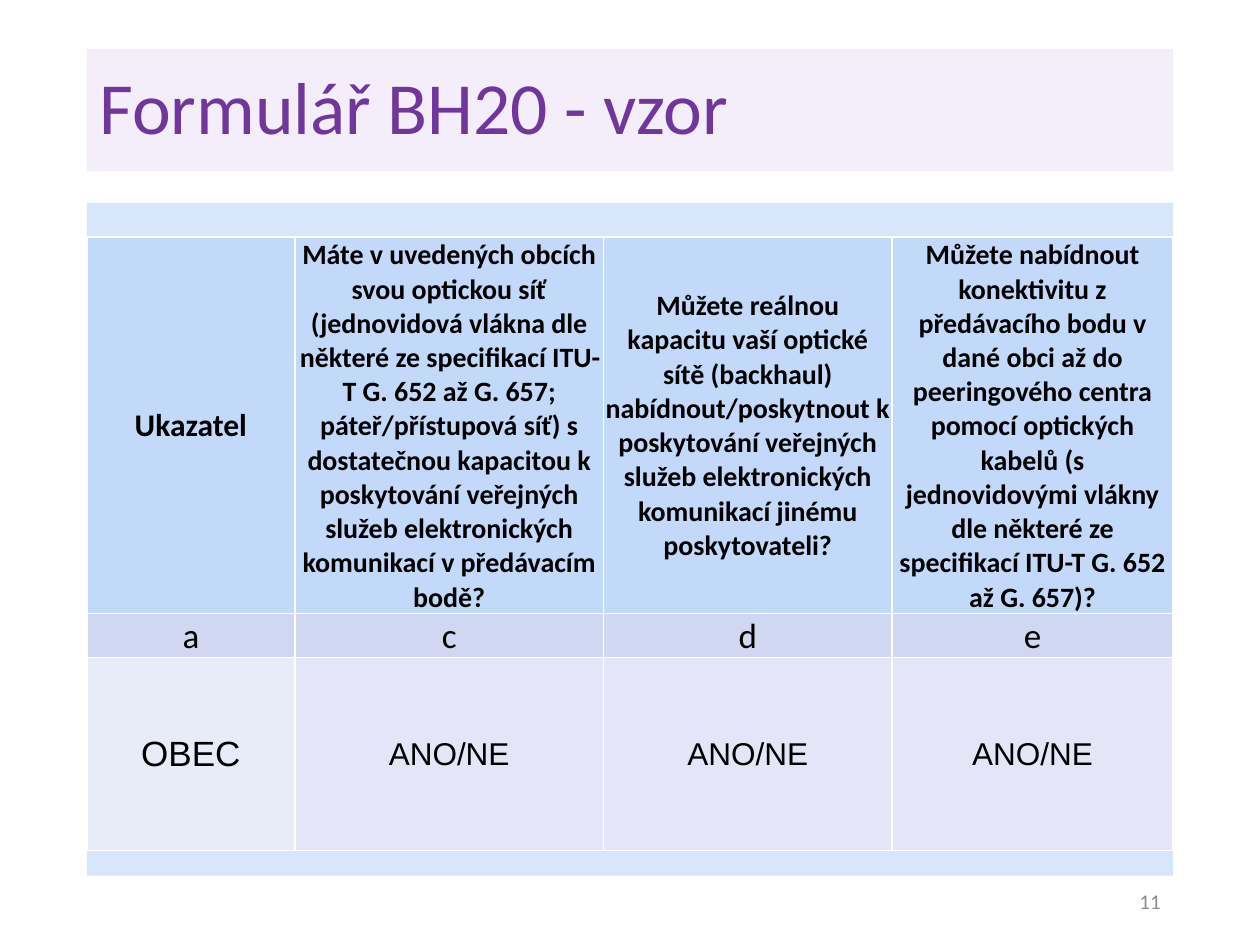
from dataclasses import dataclass

from lxml import etree
from pptx import Presentation
from pptx import util as u
from pptx.dml.color import RGBColor
from pptx.enum import shapes, text
from pptx.oxml.ns import qn


@dataclass(frozen=True)
class Theme:
    font: str = "Calibri"
    answer_font: str = "Arial"
    purple: str = "70369B"
    lilac: str = "EEE5F7"
    blue: str = "C2D9FA"
    letter_fill: str = "D0D8F1"
    town_fill: str = "E7ECF8"
    black: str = "000000"
    white: str = "FFFFFF"
    grey: str = "8C8C8C"
    title: int = 42
    large: int = 20
    label: int = 18
    question: int = 16
    number: int = 12
    opacity: int = 65


THEME = Theme()
COLUMNS = (1.65, 2.45, 2.29, 2.23)
ROWS = (2.99, 0.35, 1.53)
HEADINGS = (
    "Ukazatel",
    "Máte v uvedených obcích svou optickou síť (jednovidová vlákna dle "
    "některé ze specifikací ITU-T G. 652 až G. 657; páteř/přístupová síť) s "
    "dostatečnou kapacitou k poskytování veřejných služeb elektronických "
    "komunikací v předávacím bodě?",
    "Můžete reálnou kapacitu vaší optické sítě (backhaul) "
    "nabídnout/poskytnout k poskytování veřejných služeb elektronických "
    "komunikací jinému poskytovateli?",
    "Můžete nabídnout konektivitu z předávacího bodu v dané obci až do "
    "peeringového centra pomocí optických kabelů (s jednovidovými vlákny dle "
    "některé ze specifikací ITU-T G. 652 až G. 657)?",
)
LETTERS = ("a", "c", "d", "e")
ANSWERS = ("OBEC",) + ("ANO/NE",) * 3


def paint(fill, color, opacity=100):
    fill.solid()
    fill.fore_color.rgb = RGBColor.from_string(color)
    if opacity < 100:
        for tint in fill._xPr.iter(qn("a:srgbClr")):
            etree.SubElement(tint, qn("a:alpha"), val=str(opacity * 1000))


def write(frame, words, size, color=THEME.black, font=THEME.font, bold=False,
          align=text.PP_ALIGN.LEFT, spacing=1.0):
    para = frame.paragraphs[0]
    para.alignment = align
    para.line_spacing = spacing
    span = para.add_run()
    span.text = words
    span.font.name = font
    span.font.size = u.Pt(size)
    span.font.bold = bold
    span.font.color.rgb = RGBColor.from_string(color)


def add_panel(page, box, color):
    panel = page.shapes.add_shape(shapes.MSO_SHAPE.RECTANGLE, *map(u.Inches, box))
    panel.shadow.inherit = False
    panel.line.fill.background()
    paint(panel.fill, color, THEME.opacity)
    return panel


def add_title(page, box):
    frame = add_panel(page, box, THEME.lilac).text_frame
    frame.word_wrap = True
    frame.vertical_anchor = text.MSO_ANCHOR.MIDDLE
    write(frame, "Formulář BH20 - vzor", THEME.title, THEME.purple, spacing=0.9)


def add_borders(cell):
    properties = cell._tc.get_or_add_tcPr()
    for index, side in enumerate(("lnL", "lnR", "lnT", "lnB")):
        line = etree.Element(qn(f"a:{side}"), w=str(u.Pt(1)))
        solid = etree.SubElement(line, qn("a:solidFill"))
        etree.SubElement(solid, qn("a:srgbClr"), val=THEME.white)
        properties.insert(index, line)


def fill_cell(cell, words, color, opacity=100, **style):
    cell.margin_left = cell.margin_right = cell.margin_top = u.Inches(0.01)
    cell.margin_bottom = 0
    cell.vertical_anchor = text.MSO_ANCHOR.MIDDLE
    paint(cell.fill, color, opacity)
    add_borders(cell)
    write(cell.text_frame, words, align=text.PP_ALIGN.CENTER, **style)


def add_form(page, box):
    left, top, width, height = box
    add_panel(page, box, THEME.blue)
    table = page.shapes.add_table(
        len(ROWS), len(COLUMNS), u.Inches(left), u.Inches(top + 0.27),
        u.Inches(width), u.Inches(sum(ROWS))).table
    for column, size in zip(table.columns, COLUMNS):
        column.width = u.Inches(size)
    for row, size in zip(table.rows, ROWS):
        row.height = u.Inches(size)

    # The first column names the town, the others hold the questions
    for index, (heading, letter, answer) in enumerate(zip(HEADINGS, LETTERS, ANSWERS)):
        first = index == 0
        fill_cell(table.cell(0, index), heading, THEME.blue, bold=True,
                  size=THEME.label if first else THEME.question)
        fill_cell(table.cell(1, index), letter, THEME.letter_fill, size=THEME.large)
        fill_cell(table.cell(2, index), answer,
                  THEME.town_fill if first else THEME.lilac,
                  100 if first else THEME.opacity,
                  size=THEME.large if first else THEME.label,
                  font=THEME.answer_font)


def add_page_number(page, box):
    frame = page.shapes.add_textbox(*map(u.Inches, box)).text_frame
    frame.word_wrap = True
    frame.vertical_anchor = text.MSO_ANCHOR.MIDDLE
    write(frame, "11", THEME.number, THEME.grey, align=text.PP_ALIGN.RIGHT)


def main():
    deck = Presentation()
    deck.slide_width, deck.slide_height = u.Inches(10), u.Inches(7.5)
    page = deck.slides.add_slide(deck.slide_layouts[6])
    left, width = 0.69, 8.62
    add_page_number(page, (7.06, 6.95, 2.25, 0.4))
    add_title(page, (left, 0.39, width, 0.97))
    add_form(page, (left, 1.61, width, 5.34))
    deck.save("out.pptx")


if __name__ == "__main__":
    main()
